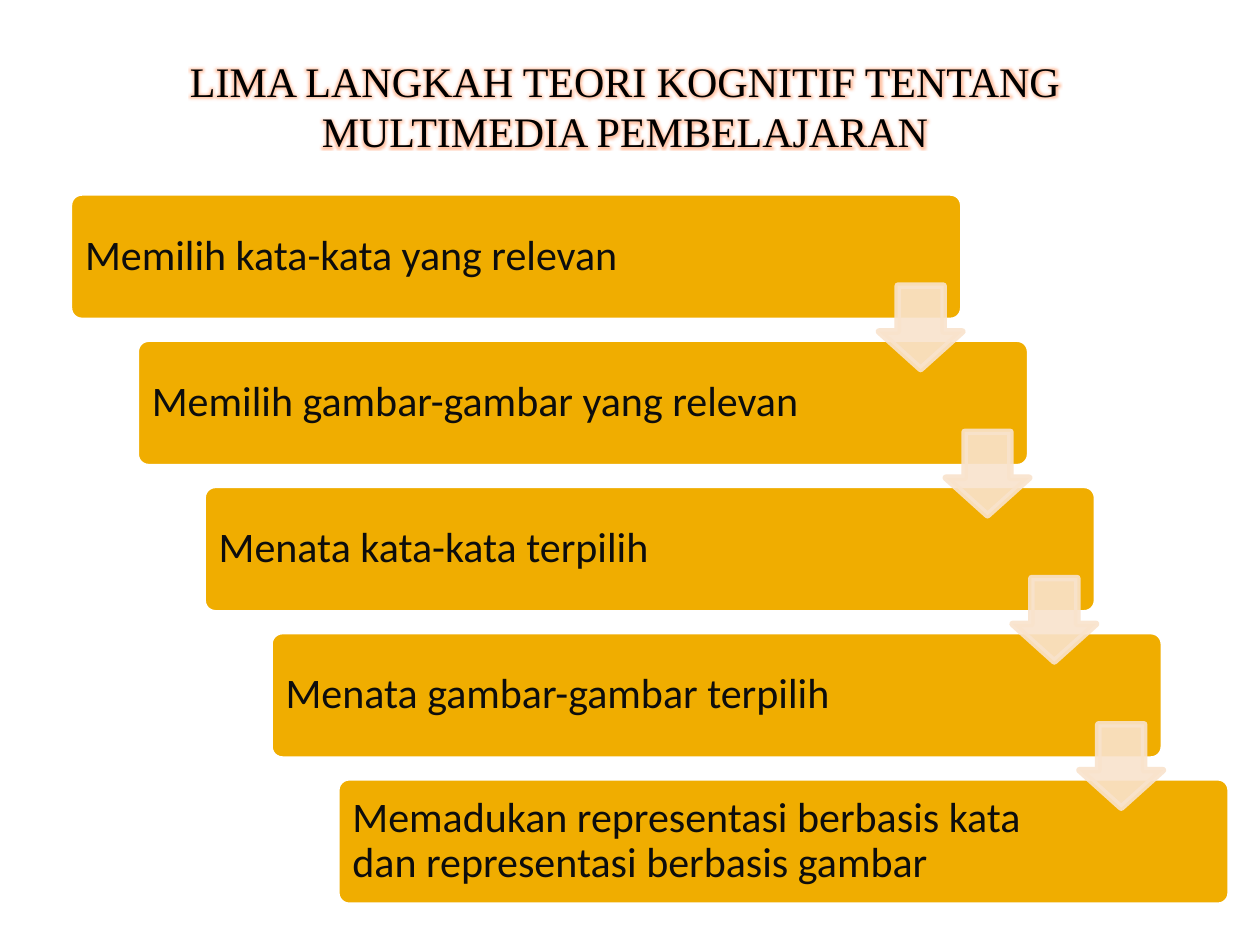
from lxml.etree import SubElement
from pptx import Presentation
from pptx.dml.color import RGBColor
from pptx.enum.shapes import MSO_SHAPE as Preset
from pptx.enum.text import MSO_ANCHOR as Anchor, PP_ALIGN as Align
from pptx.oxml.ns import qn
from pptx.util import Cm, Pt

COLORS = {
    "title": "000000",
    "glow": "FF6A20",
    "step": "F0AD00",
    "edge": "FFFFFF",
    "text": "0D0D0D",
    "arrow": "F9E3CC",
}
TITLE = "LIMA LANGKAH TEORI KOGNITIF TENTANG MULTIMEDIA PEMBELAJARAN"
STEPS = [
    "Memilih kata-kata yang relevan",
    "Memilih gambar-gambar yang relevan",
    "Menata kata-kata terpilih",
    "Menata gambar-gambar terpilih",
    "Memadukan representasi berbasis kata dan representasi berbasis gambar",
]
STEP_WIDTH, STEP_HEIGHT = 18.03, 2.59
ARROW_SIZE = 1.68
ARROW_RIGHT, ARROW_DOWN = 16.33, 1.88


def color(name):
    """Return the named palette colour."""
    return RGBColor.from_string(COLORS[name])


def set_font(paragraph, face, color_name):
    """Set the face and colour of a 24 pt paragraph."""
    paragraph.font.name = face
    paragraph.font.size = Pt(24)
    paragraph.font.color.rgb = color(color_name)


def add_glow(run):
    """Give the letters of a run a soft coloured glow."""
    effects = SubElement(run._r.get_or_add_rPr(), qn("a:effectLst"))
    glow = SubElement(effects, qn("a:glow"), rad=str(Pt(4.5)))
    tint = SubElement(glow, qn("a:srgbClr"), val=COLORS["glow"])
    SubElement(tint, qn("a:alpha"), val="40000")


def add_title(slide, left, top, width, height):
    """Place the centred, glowing title in the given box."""
    title = slide.shapes.add_textbox(Cm(left), Cm(top), Cm(width), Cm(height))
    title.text_frame.word_wrap = True
    heading = title.text_frame.paragraphs[0]
    heading.text = TITLE
    heading.alignment = Align.CENTER
    set_font(heading, "Times New Roman", "title")
    add_glow(heading.runs[0])


def add_block(slide, preset, box, fill, edge):
    """Add a filled preset shape with a thick outline and no shadow."""
    block = slide.shapes.add_shape(preset, *map(Cm, box))
    block.shadow.inherit = False
    block.fill.solid()
    block.fill.fore_color.rgb = color(fill)
    block.line.color.rgb = color(edge)
    block.line.width = Pt(3.78)
    return block


def add_step(slide, left, top, wording):
    """Place one step of the staircase with its wording."""
    box = (left, top, STEP_WIDTH, STEP_HEIGHT)
    step = add_block(slide, Preset.ROUNDED_RECTANGLE, box, "step", "edge")
    step.adjustments[0] = 0.1
    frame = step.text_frame
    frame.word_wrap = True
    frame.vertical_anchor = Anchor.MIDDLE
    frame.margin_left, frame.margin_right = Cm(0.25), Cm(3.35)
    frame.margin_top = frame.margin_bottom = Cm(0.25)
    label = frame.paragraphs[0]
    label.text = wording
    label.alignment = Align.LEFT
    label.line_spacing = 0.9
    set_font(label, "Calibri", "text")


def add_arrow(slide, left, top):
    """Place a translucent arrow leading to the next step."""
    box = (left, top, ARROW_SIZE, ARROW_SIZE)
    arrow = add_block(slide, Preset.DOWN_ARROW, box, "arrow", "arrow")
    arrow.adjustments[0], arrow.adjustments[1] = 0.55, 0.45
    for tint in arrow._element.spPr.iter(qn("a:srgbClr")):
        SubElement(tint, qn("a:alpha"), val="90000")


def add_staircase(slide, left, top, width, height):
    """Spread the steps diagonally over the box and join them with arrows."""
    gaps = len(STEPS) - 1
    shift = (width - STEP_WIDTH) / gaps
    drop = (height - STEP_HEIGHT) / gaps
    corners = [(left + i * shift, top + i * drop) for i in range(len(STEPS))]
    for (step_left, step_top), wording in zip(corners, STEPS):
        add_step(slide, step_left, step_top, wording)
    for step_left, step_top in corners[:-1]:
        add_arrow(slide, step_left + ARROW_RIGHT, step_top + ARROW_DOWN)


def main():
    """Build and save the slide."""
    deck = Presentation()
    deck.slide_width, deck.slide_height = Cm(25.4), Cm(19.05)
    slide = deck.slides.add_slide(deck.slide_layouts[6])
    add_title(slide, left=1.78, top=0.99, width=21.64, height=2.31)
    add_staircase(slide, left=1.39, top=3.88, width=23.42, height=14.38)
    deck.save("out.pptx")


if __name__ == "__main__":
    main()
